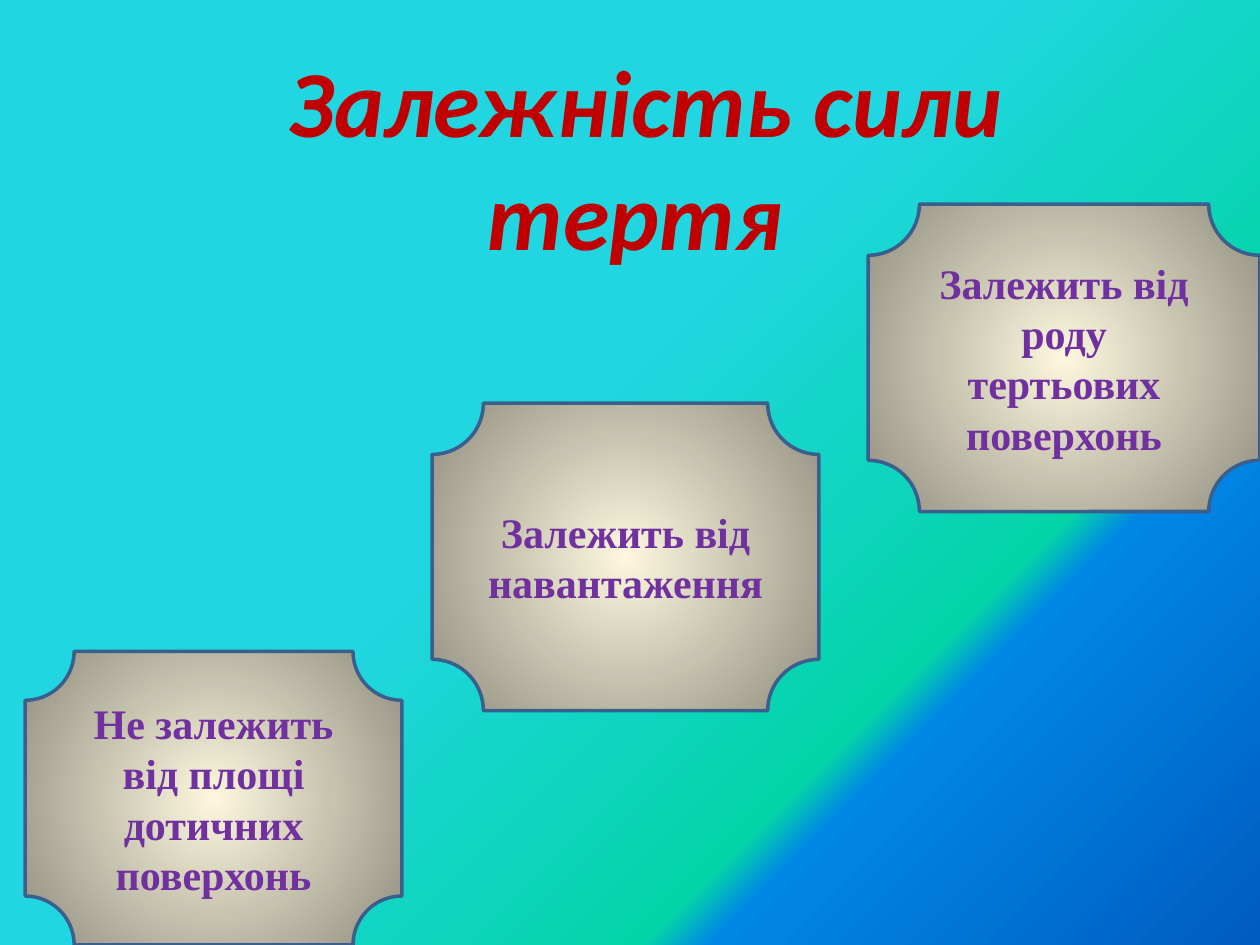
"""Builds a slide on what the force of friction depends on."""
from lxml import etree
from pptx import Presentation
from pptx.dml.color import RGBColor
from pptx.enum.shapes import MSO_SHAPE
from pptx.enum.text import MSO_ANCHOR, MSO_AUTO_SIZE, PP_ALIGN
from pptx.oxml import parse_xml
from pptx.oxml.ns import nsdecls, qn
from pptx.util import Inches, Pt

PLAQUE = MSO_SHAPE.PLAQUE
CENTER = PP_ALIGN.CENTER
MIDDLE = MSO_ANCHOR.MIDDLE
GROW = MSO_AUTO_SIZE.SHAPE_TO_FIT_TEXT


def color(value):
    """Turn a hex string into a colour."""
    return RGBColor.from_string(value)


def add_color(parent, value, alpha=100):
    """Add a colour element with an opacity in percent."""
    element = etree.SubElement(parent, qn("a:srgbClr"), val=value)
    if alpha < 100:
        etree.SubElement(element, qn("a:alpha"), val=str(alpha * 1000))


def set_gradient(fill, owner, stops, focus):
    """Give the fill of an element a circular gradient."""
    fill.gradient()
    gradient = owner.find(".//" + qn("a:gradFill"))
    for child in list(gradient):
        gradient.remove(child)
    stop_list = etree.SubElement(gradient, qn("a:gsLst"))
    for position, value, *alpha in stops:
        stop = etree.SubElement(stop_list, qn("a:gs"), pos=str(position * 1000))
        add_color(stop, value, *alpha)
    circle = etree.SubElement(gradient, qn("a:path"), path="circle")
    sides = {side: str(share * 1000) for side, share in zip("ltrb", focus)}
    etree.SubElement(circle, qn("a:fillToRect"), **sides)


def write_text(frame, text, *, size, font, fill, outline, width, alpha=100, italic=False):
    """Write a centred bold paragraph with outlined letters."""
    frame.word_wrap = True
    paragraph = frame.paragraphs[0]
    paragraph.alignment = CENTER
    for index, line in enumerate(text.split("\n")):
        if index:
            paragraph.add_line_break()
        run = paragraph.add_run()
        run.text = line
        run.font.size = Pt(size)
        run.font.name = font
        run.font.bold = True
        run.font.italic = italic
        run.font.color.rgb = color(fill)
        border = parse_xml(f'<a:ln {nsdecls("a")} w="{Pt(width)}"><a:solidFill/></a:ln>')
        add_color(border[0], outline, alpha)
        run._r.get_or_add_rPr().insert(0, border)


class FrictionSlide:
    """Holds the style and the current slide."""

    title_style = dict(size=54, font="Calibri", fill="C00000", italic=True,
                       outline="4F81BD", width=0.8)
    plaque_style = dict(size=24, font="Times New Roman", fill="7030A0",
                        outline="1E7CEE", width=0.07, alpha=55)
    background_stops = [(45, "21D6E0", 32), (72, "03D4A8"),
                        (75, "0087E6"), (100, "005CBF")]
    plaque_stops = [(0, "FCF7DD"), (100, "918E81")]

    def __init__(self, presentation):
        """Add a blank slide."""
        self.slide = presentation.slides.add_slide(presentation.slide_layouts[6])

    def paint_background(self):
        """Spread the gradient from the top left corner."""
        set_gradient(self.slide.background.fill, self.slide.element,
                     self.background_stops, (0, 0, 100, 100))

    def add_title(self, text, *box):
        """Add the title."""
        shape = self.slide.shapes.add_textbox(*map(Inches, box))
        write_text(shape.text_frame, text, **self.title_style)
        shape.text_frame.auto_size = GROW

    def add_plaque(self, text, *box):
        """Add a plaque with a statement."""
        shape = self.slide.shapes.add_shape(PLAQUE, *map(Inches, box))
        shape.shadow.inherit = False
        set_gradient(shape.fill, shape.element, self.plaque_stops, (50, 50, 50, 50))
        shape.line.color.rgb = color("3A5F8C")
        shape.line.width = Pt(2)
        shape.text_frame.vertical_anchor = MIDDLE
        write_text(shape.text_frame, text, **self.plaque_style)


def main():
    """Build and save the presentation."""
    presentation = Presentation()
    presentation.slide_width = Inches(10)
    presentation.slide_height = Inches(7.5)
    friction = FrictionSlide(presentation)
    friction.paint_background()
    friction.add_title("Залежність сили тертя ", 1.69, 0.29, 6.87, 1.92)
    friction.add_plaque("Не залежить від площі дотичних поверхонь", 0.2, 5.17, 2.99, 2.33)
    friction.add_plaque("Залежить від навантаження", 3.43, 3.2, 3.07, 2.44)
    friction.add_plaque("Залежить від роду\nтертьових поверхонь", 6.89, 1.62, 3.11, 2.44)
    presentation.save("out.pptx")


if __name__ == "__main__":
    main()
